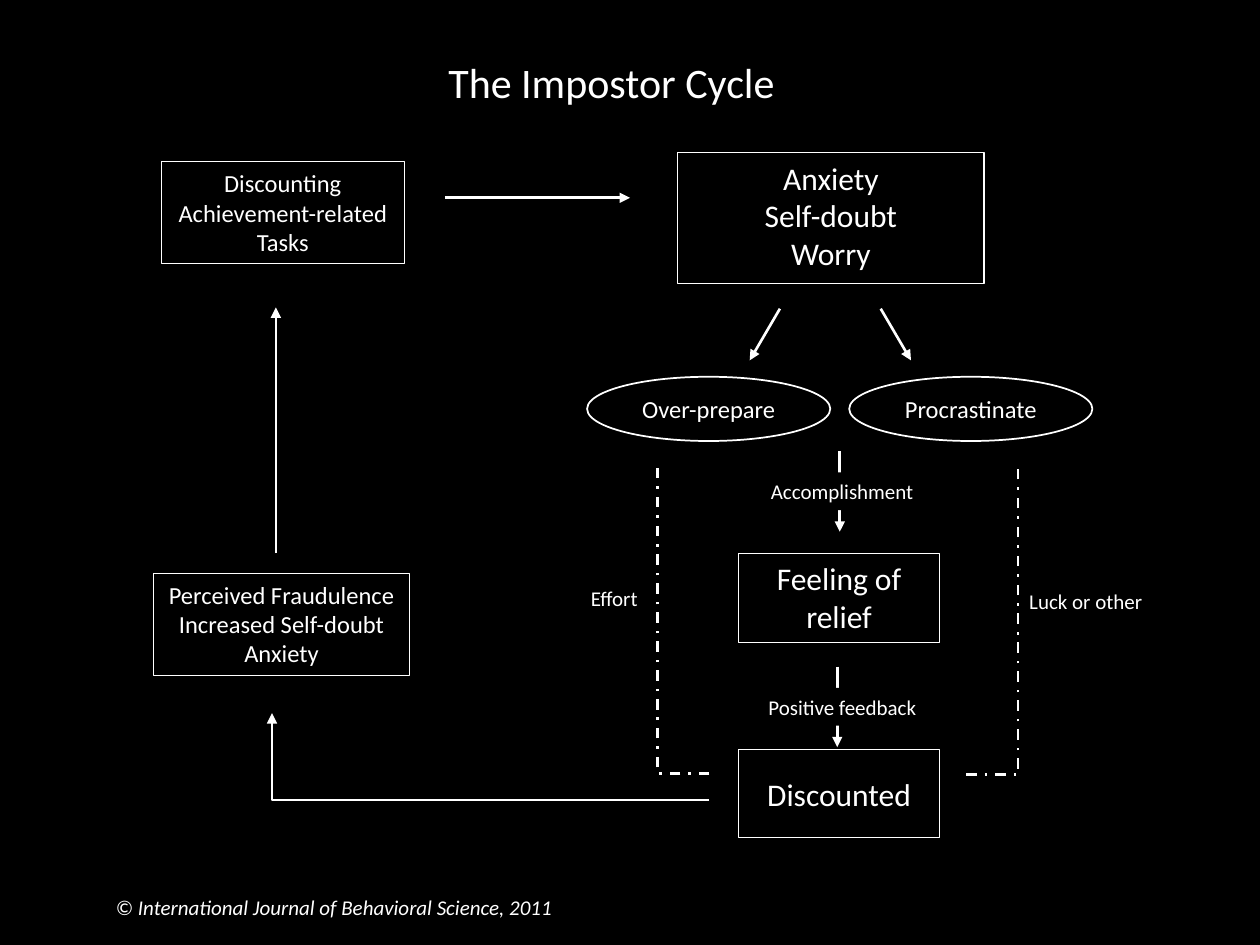
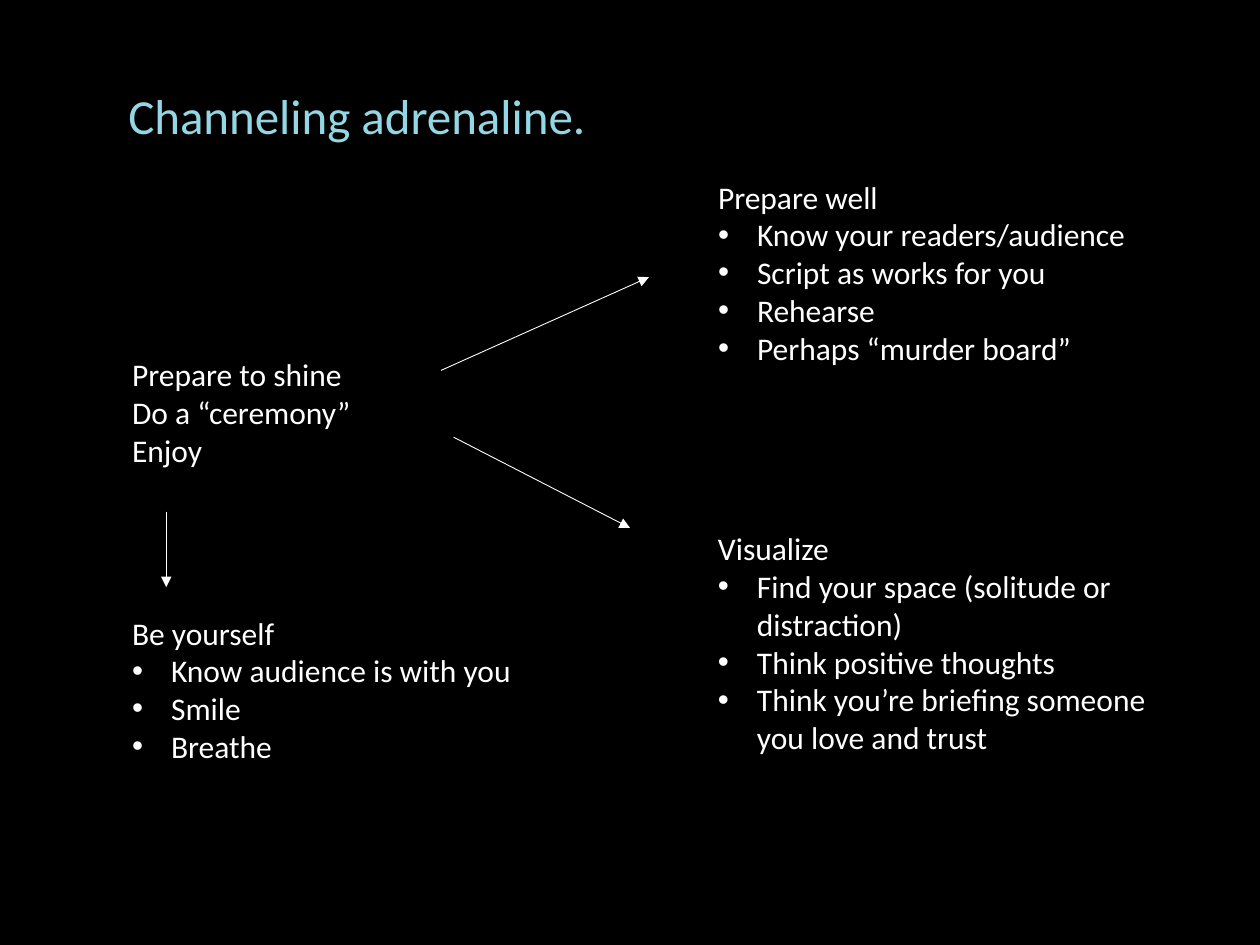
from lxml.etree import SubElement
from pptx import Presentation
from pptx.dml.color import RGBColor
from pptx.enum.dml import MSO_LINE
from pptx.enum.shapes import MSO_CONNECTOR, MSO_SHAPE
from pptx.enum.text import MSO_ANCHOR, MSO_AUTO_SIZE, PP_ALIGN
from pptx.oxml.ns import qn
from pptx.util import Inches, Pt

# The slide is a grid of 100 columns by 75 rows; boxes are (column, row, width, height)
SLIDE_WIDTH, SLIDE_HEIGHT = Inches(10), Inches(7.5)
COLUMN, ROW = SLIDE_WIDTH / 100, SLIDE_HEIGHT / 75

FONT = "Calibri"
BLACK, WHITE, SKY = "000000", "FFFFFF", "94D7E4"
HEADING_SIZE, STEP_SIZE, LABEL_SIZE = 18, 14, 12
BULLET_INDENT = Inches(0.31)


def color(hex_string):
    return RGBColor.from_string(hex_string)


def across(columns):
    return round(columns * COLUMN)


def down(rows):
    return round(rows * ROW)


def inside(box, left, top, width=0, height=0):
    """Turn an area given relative to a box into one on the slide grid."""
    return box[0] + left, box[1] + top, width, height


def to_lengths(box):
    left, top, width, height = box
    return across(left), down(top), across(width), down(height)


# Shared parts

def new_page(deck):
    page = deck.slides.add_slide(deck.slide_layouts[6])
    page.background.fill.solid()
    page.background.fill.fore_color.rgb = color(BLACK)
    return page


def write(shape, text, size, text_color=WHITE, align=PP_ALIGN.LEFT,
          anchor=MSO_ANCHOR.TOP, wrap=True, grow=True, italic=False):
    frame = shape.text_frame
    frame.text = text
    frame.word_wrap = wrap
    frame.vertical_anchor = anchor
    frame.auto_size = MSO_AUTO_SIZE.SHAPE_TO_FIT_TEXT if grow else MSO_AUTO_SIZE.NONE
    for para in frame.paragraphs:
        para.alignment = align
        for span in para.runs:
            span.font.name = FONT
            span.font.size = Pt(size)
            span.font.italic = italic
            span.font.color.rgb = color(text_color)
    return frame


def add_text(page, box, text, size, **style):
    return write(page.shapes.add_textbox(*to_lengths(box)), text, size, **style)


def add_panel(page, box, text, size, kind=MSO_SHAPE.RECTANGLE, fill=None,
              line_width=0.75, align=PP_ALIGN.CENTER, **style):
    """Draw a shape with text; a line width of 0 means no outline."""
    panel = page.shapes.add_shape(kind, *to_lengths(box))
    panel.shadow.inherit = False
    if fill:
        panel.fill.solid()
        panel.fill.fore_color.rgb = color(fill)
    else:
        panel.fill.background()
    if line_width:
        panel.line.color.rgb = color(WHITE)
        panel.line.width = Pt(line_width)
    else:
        panel.line.fill.background()
    write(panel, text, size, align=align, **style)


def add_line(page, start, end, width=1.5, kind=MSO_CONNECTOR.STRAIGHT,
             arrow=True, dash=None):
    """Join two grid points; an elbow runs along the row first, then the column."""
    line = page.shapes.add_connector(
        kind, across(start[0]), down(start[1]), across(end[0]), down(end[1]))
    line.line.color.rgb = color(WHITE)
    line.line.width = Pt(width)
    if dash:
        line.line.dash_style = dash
    properties = line._element.spPr
    if arrow:
        SubElement(properties.find(qn("a:ln")), qn("a:tailEnd"), type="triangle")
    SubElement(properties, qn("a:effectLst"))
    if kind == MSO_CONNECTOR.ELBOW:
        geometry = properties.find(qn("a:prstGeom"))
        guides = geometry.find(qn("a:avLst"))
        if guides is None:
            guides = SubElement(geometry, qn("a:avLst"))
        SubElement(guides, qn("a:gd"), name="adj1", fmla="val 100000")


def add_title(page, box, text, size, **style):
    return add_text(page, box, text, size, **style)


# Regions of the cycle

def add_coping_choice(page, box, text, arrow_start, arrow_run):
    """An ellipse with a slanted arrow leading down to it."""
    start = inside(box, arrow_start, -5.4)[:2]
    end = inside(box, arrow_start + arrow_run, -1.3)[:2]
    add_line(page, start, end)
    add_panel(page, box, text, STEP_SIZE, kind=MSO_SHAPE.OVAL, line_width=1,
              anchor=MSO_ANCHOR.MIDDLE, grow=False)


def add_labelled_arrow(page, box, text):
    """A downward arrow interrupted by its label."""
    add_line(page, inside(box, 6.45, -1.7)[:2], inside(box, 6.45, 4.7)[:2])
    add_panel(page, box, text, LABEL_SIZE, fill=BLACK, line_width=0,
              align=PP_ALIGN.LEFT)


def add_attribution(page, box, text, label_area, side):
    """A dash-dot bracket, upright on the given side, with its label."""
    width, height = box[2:]
    foot, upright = (width, 0) if side == "left" else (0, width)
    add_line(page, inside(box, foot, height)[:2], inside(box, upright, 0)[:2],
             kind=MSO_CONNECTOR.ELBOW, arrow=False, dash=MSO_LINE.DASH_DOT)
    add_text(page, inside(box, *label_area), text, LABEL_SIZE, wrap=False)


def build_impostor_cycle(deck):
    page = new_page(deck)
    add_title(page, (34.6, 4, 28.6, 5), "The Impostor Cycle", 24, wrap=False)

    # Start of the cycle and the two ways of coping
    add_panel(page, (53.8, 12.1, 24.3, 10.4), "Anxiety\nSelf-doubt\nWorry", HEADING_SIZE)
    add_coping_choice(page, (46.6, 29.9, 19.3, 5.1), "Over-prepare", 15.3, -2.4)
    add_coping_choice(page, (67.4, 29.9, 19.3, 5.1), "Procrastinate", 2.5, 2.4)

    # Outcome column
    add_labelled_arrow(page, (60.2, 37.5, 14.4, 3), "Accomplishment")
    add_panel(page, (58.6, 43.9, 16, 7.1), "Feeling of relief", HEADING_SIZE)
    add_labelled_arrow(page, (60, 54.6, 14.4, 3), "Positive feedback")
    add_panel(page, (58.6, 59.5, 16, 7), "Discounted", HEADING_SIZE,
              anchor=MSO_ANCHOR.MIDDLE)
    add_attribution(page, (52.2, 36.9, 4.1, 24.5), "Effort",
                    (-6.3, 9.1, 6.1, 3), "left")
    add_attribution(page, (76.7, 36.9, 4.1, 24.6), "Luck or other",
                    (4, 9.3, 11.2, 3), "right")

    # Return path on the left
    add_line(page, (56.3, 63.5), (21.6, 56.6), kind=MSO_CONNECTOR.ELBOW)
    add_panel(page, (12.2, 45.5, 20.3, 8.1),
              "Perceived Fraudulence\nIncreased Self-doubt\nAnxiety",
              STEP_SIZE, wrap=False)
    add_line(page, (21.9, 43.9), (21.9, 24.4))
    add_panel(page, (12.8, 12.8, 19.3, 8.1),
              "Discounting\nAchievement-related\nTasks",
              STEP_SIZE, anchor=MSO_ANCHOR.MIDDLE, wrap=False)
    add_line(page, (35.3, 15.7), (50, 15.7))

    # Source line
    add_text(page, (8.2, 70.5, 37.2, 3),
             "© International Journal of Behavioral Science, 2011",
             LABEL_SIZE, wrap=False, italic=True)


# Regions of the adrenaline page

def add_topic(page, box, heading, points, arrow_start, arrow_end, wrap=True):
    """A heading with bulleted points and the thin arrow that leads to it."""
    frame = add_text(page, box, "\n".join([heading, *points]), HEADING_SIZE, wrap=wrap)
    for para in frame.paragraphs[1:]:
        properties = para._p.get_or_add_pPr()
        properties.set("marL", str(BULLET_INDENT))
        properties.set("indent", str(-BULLET_INDENT))
        SubElement(properties, qn("a:buFont"), typeface="Arial")
        SubElement(properties, qn("a:buChar"), char="•")
    add_line(page, inside(box, *arrow_start)[:2], inside(box, *arrow_end)[:2], width=0.5)


def build_channeling_adrenaline(deck):
    page = new_page(deck)
    title = add_title(page, (9.2, 6.8, 79.7, 6.8), "Channeling adrenaline.", 28,
                      text_color=SKY, grow=False)
    title.paragraphs[0].line_spacing = 0.9

    # Starting point
    add_text(page, (9.5, 27.7, 19.7, 10.1),
             "Prepare to shine\nDo a “ceremony”\nEnjoy", HEADING_SIZE, wrap=False)

    # Topics it leads to
    add_topic(page, (56, 13.6, 34.9, 16.2), "Prepare well",
              ["Know your readers/audience", "Script as works for you",
               "Rehearse", "Perhaps “murder board”"],
              (-21, 15.8), (-4.5, 8.4), wrap=False)
    add_topic(page, (56, 41.5, 38.4, 19.2), "Visualize",
              ["Find your space (solitude or distraction)",
               "Think positive thoughts",
               "Think you’re briefing someone you love and trust"],
              (-20, -6.8), (-6, 0.4))
    add_topic(page, (9.5, 48.2, 37.6, 16.2), "Be yourself",
              ["Know audience is with you", "Smile", "Breathe"],
              (3.7, -7.6), (3.7, -1.6))


def main():
    deck = Presentation()
    deck.slide_width, deck.slide_height = SLIDE_WIDTH, SLIDE_HEIGHT
    build_impostor_cycle(deck)
    build_channeling_adrenaline(deck)
    deck.save("out.pptx")


if __name__ == "__main__":
    main()
